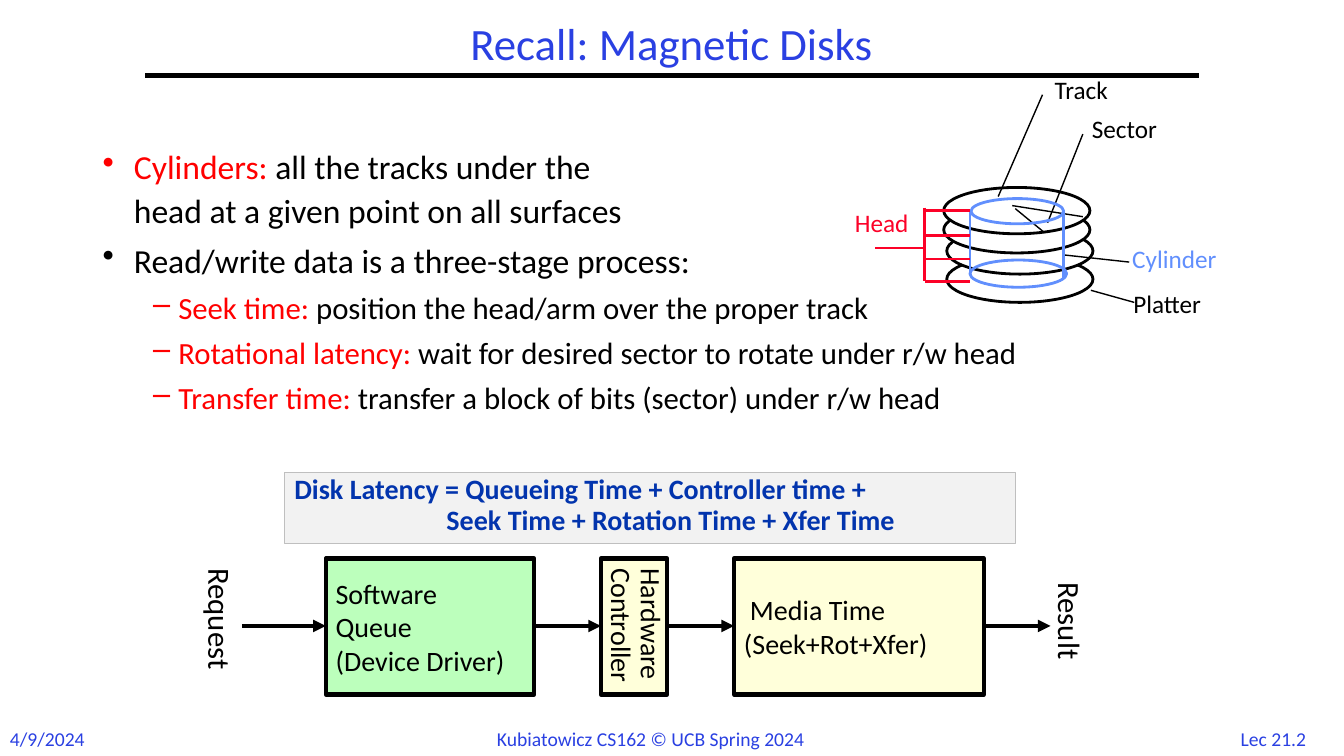
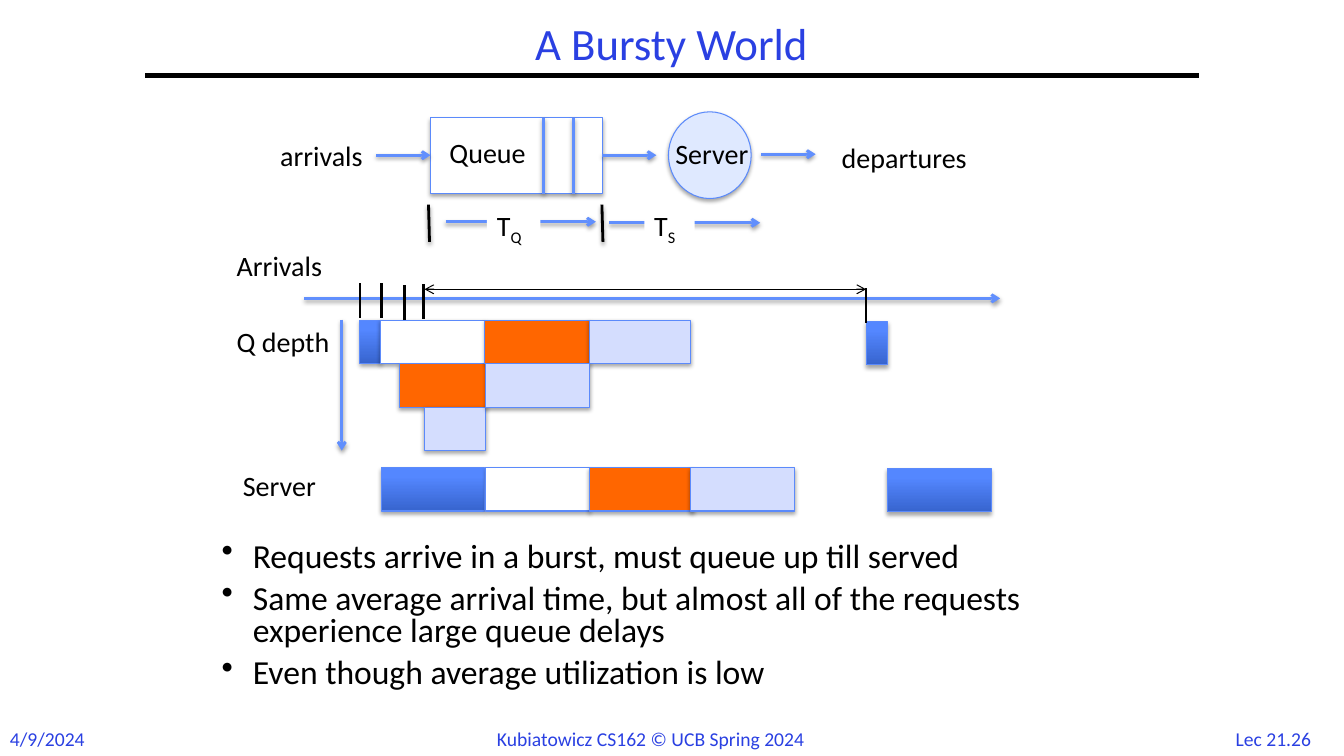
from dataclasses import dataclass

from lxml.etree import SubElement
from pptx import Presentation
from pptx.dml.color import RGBColor
from pptx.enum.shapes import MSO_CONNECTOR, MSO_SHAPE
from pptx.enum.text import MSO_ANCHOR, PP_ALIGN
from pptx.oxml.ns import qn
from pptx.util import Cm, Pt

BLACK, WHITE, RED = "000000", "FFFFFF", "FF0000"
TITLE_BLUE, LATENCY_BLUE = "2A40E2", "0234AD"
LINE_BLUE, EDGE_BLUE = "618FFD", "5B8AFB"
HEAD_RED, GREEN, CREAM = "FC0128", "BCFFBC", "FFFFDA"
ORANGE, PALE, SERVER_FILL = "FF6600", "D4DDFE", "DFE9FF"
BLUE_GRADIENT = ("3764CE", "5487FF")
BULLETS = [("•", 0.31, -0.31, 24), ("–", 0.75, -0.25, 22)]
NORMAL, TIGHT = (0.1, 0.05), (0.07, 0.03)


def inch(value):
    return Cm(2.54 * value)


def rgb(value):
    return RGBColor.from_string(value)


@dataclass
class Deck:
    prs: object
    slide: object = None
    font: str = "Calibri"

    def new_slide(self, title, number):
        self.slide = self.prs.slides.add_slide(self.prs.slide_layouts[6])
        self.label(12.09, 7.16, 1.08, 0.34, number, 14, TITLE_BLUE,
                   align=PP_ALIGN.CENTER)
        self.label(0, 7.16, 1.5, 0.34, "4/9/2024", 14, TITLE_BLUE)
        self.label(4.83, 7.16, 3.68, 0.34,
                   "Kubiatowicz CS162 © UCB Spring 2024", 14, TITLE_BLUE)
        self.line(1.44, 0.75, 11.89, 0.75, width=3)
        tf = self.label(1.44, 0.17, 10.44, 0.58, title, 32, TITLE_BLUE,
                        align=PP_ALIGN.CENTER, spacing=0.9).text_frame
        tf.vertical_anchor = MSO_ANCHOR.MIDDLE

    def frame(self, sp, inset=NORMAL):
        tf = sp.text_frame
        tf.word_wrap = True
        tf.margin_left = tf.margin_right = inch(inset[0])
        tf.margin_top = tf.margin_bottom = inch(inset[1])
        return tf

    def run(self, p, text, size, color=BLACK, bold=False):
        r = p.add_run()
        r.text = text
        r.font.name = self.font
        r.font.size = Pt(size)
        r.font.bold = bold
        r.font.color.rgb = rgb(color)
        return r

    def para(self, tf, runs, size, spacing=1.0, before=0, align=PP_ALIGN.LEFT,
             indent=0, bold=False):
        p = tf.paragraphs[0]
        if p.runs:
            p = tf.add_paragraph()
        p.alignment = align
        p.line_spacing = spacing
        p.space_before = Pt(before * size)
        if indent:
            p._p.get_or_add_pPr().set("marL", str(inch(indent)))
        for text, color in runs:
            if text == "\n":
                p.add_line_break()
            else:
                self.run(p, text, size, color, bold)
        return p

    def label(self, x, y, w, h, text, size=20, color=BLACK, inset=NORMAL,
              align=PP_ALIGN.LEFT, spacing=1.0):
        sp = self.slide.shapes.add_textbox(inch(x), inch(y), inch(w), inch(h))
        self.para(self.frame(sp, inset), [(text, color)], size, spacing,
                  align=align)
        return sp

    def bullets(self, x, y, w, h, items, spacing, before):
        sp = self.slide.shapes.add_textbox(inch(x), inch(y), inch(w), inch(h))
        tf = self.frame(sp)
        for level, runs in items:
            char, left, hang, size = BULLETS[level]
            p = self.para(tf, runs, size, spacing, before, indent=left)
            pPr = p._p.get_or_add_pPr()
            pPr.set("indent", str(inch(hang)))
            SubElement(pPr, qn("a:buChar")).set("char", char)

    def effects(self, sp, shadow, alpha):
        spPr = sp.element.spPr
        lst = spPr.find(qn("a:effectLst"))
        if lst is None:
            lst = SubElement(spPr, qn("a:effectLst"))
        if shadow:
            outer = SubElement(lst, qn("a:outerShdw"), blurRad=str(Pt(3.1)),
                               dist=str(Pt(1.7)), dir="5400000",
                               rotWithShape="0")
            clr = SubElement(outer, qn("a:srgbClr"), val=BLACK)
            SubElement(clr, qn("a:alpha"), val=str(alpha * 1000))

    def shape(self, x, y, w, h, fill=None, line=BLACK, width=2.0,
              kind=MSO_SHAPE.RECTANGLE, shadow=False):
        sp = self.slide.shapes.add_shape(kind, inch(x), inch(y), inch(w),
                                         inch(h))
        if fill is None:
            sp.fill.background()
        elif isinstance(fill, tuple):
            sp.fill.gradient()
            sp.fill.gradient_angle = 90
            for stop, color, at in zip(sp.fill.gradient_stops, fill, (0, 0.8)):
                stop.color.rgb = rgb(color)
                stop.position = at
        else:
            sp.fill.solid()
            sp.fill.fore_color.rgb = rgb(fill)
        if line:
            sp.line.color.rgb = rgb(line)
            sp.line.width = Pt(width)
        else:
            sp.line.fill.background()
        sp.shadow.inherit = False
        self.effects(sp, shadow, 35)
        return sp

    def ellipse(self, x, y, w, h, fill=None, line=BLACK, **style):
        return self.shape(x, y, w, h, fill, line, kind=MSO_SHAPE.OVAL, **style)

    def block(self, x, y, w, h, fill, lines, spacing=1.0, before=0):
        tf = self.frame(self.shape(x, y, w, h, fill, width=3))
        tf.vertical_anchor = MSO_ANCHOR.MIDDLE
        for text, indent in lines:
            self.para(tf, [(text, BLACK)], 20, spacing, before, indent=indent)
        return tf

    def line(self, x1, y1, x2, y2, color=BLACK, width=1.0, head=None,
             tail=None, shadow=False):
        cx = self.slide.shapes.add_connector(
            MSO_CONNECTOR.STRAIGHT, inch(x1), inch(y1), inch(x2), inch(y2))
        cx.line.color.rgb = rgb(color)
        cx.line.width = Pt(width)
        ln = cx.element.spPr.find(qn("a:ln"))
        for tag, end in (("a:headEnd", head), ("a:tailEnd", tail)):
            if end:
                SubElement(ln, qn(tag), type=end)
        self.effects(cx, shadow, 38)

    def blue_line(self, x1, y1, x2, y2, tail="arrow"):
        self.line(x1, y1, x2, y2, LINE_BLUE, 2, tail=tail, shadow=True)


def draw_disk(deck):
    for x, y in ((9.39, 2.54), (9.39, 2.26), (9.36, 2.05), (9.36, 1.86)):
        deck.ellipse(x, y, 1.45, 0.46, WHITE)
    for ends in ((10.07, 2.07, 10.35, 2.3), (10.04, 2.04, 10.74, 2.15),
                 (10.39, 2.21, 10.74, 1.33), (9.9, 1.95, 10.34, 0.94),
                 (10.56, 2.53, 11.2, 2.6), (10.82, 2.88, 11.25, 3)):
        deck.line(*ends)
    deck.ellipse(9.62, 2.58, 0.96, 0.27, line=LINE_BLUE)
    deck.ellipse(9.63, 1.97, 0.92, 0.25, line=LINE_BLUE)
    for x, bottom in ((9.62, 2.71), (10.55, 2.76)):
        deck.line(x, 2.09, x, bottom, LINE_BLUE, 2)
    deck.line(9.17, 2.06, 9.17, 2.79, HEAD_RED, 2)
    deck.line(9.18, 2.46, 8.68, 2.46, HEAD_RED, 2)
    for y in (2.09, 2.34, 2.57, 2.79):
        deck.line(9.17, y, 9.62, y, HEAD_RED, 2)
    for x, y, w, text, color in (
            (10.76, 1.14, 0.87, "Sector", BLACK),
            (10.39, 0.75, 0.76, "Track", BLACK),
            (11.16, 2.43, 1.07, "Cylinder", LINE_BLUE),
            (8.41, 2.07, 0.74, "Head", HEAD_RED),
            (11.17, 2.88, 0.87, "Platter", BLACK)):
        deck.label(x, y, w, 0.31, text, 18, color, TIGHT, spacing=0.85)


def draw_request_path(deck):
    top, height, middle = 5.54, 1.35, 6.21
    deck.block(3.23, top, 2.07, height, GREEN,
               [("Software", 0), ("Queue", 0), ("(Device Driver)", 0)])
    tf = deck.block(5.96, top, 0.66, height, CREAM,
                    [("Hardware", 0), ("Controller", 0)], 0.8, 0.1)
    tf._txBody.bodyPr.set("vert", "eaVert")
    deck.block(7.28, top, 2.48, height, CREAM,
               [("Media Time", 0.06), ("(Seek+Rot+Xfer)", 0)])
    for x1, x2 in ((2.4, 3.23), (5.29, 5.96), (6.62, 7.28), (9.76, 10.42)):
        deck.line(x1, middle, x2, middle, width=3, tail="triangle")
    for x, w, text in ((1.51, 1.35, "Request"), (10.08, 1.07, "Result")):
        deck.label(x, 5.98, w, 0.47, text, 22).rotation = 90


def magnetic_disks(deck):
    deck.new_slide("Recall: Magnetic Disks", "Lec 21.2")
    stages = (("Seek time: ", "position the head/arm over the proper track"),
              ("Rotational latency: ",
               "wait for desired sector to rotate under r/w head"),
              ("Transfer time: ",
               "transfer a block of bits (sector) under r/w head"))
    items = [
        (0, [("Cylinders: ", RED), ("all the tracks under the", BLACK),
             ("\n", BLACK), ("head at a given point on all surfaces", BLACK)]),
        (0, [("Read/write data is a three-stage process:", BLACK)])]
    items += [(1, [(term, RED), (text, BLACK)]) for term, text in stages]
    deck.bullets(0.92, 1.36, 11.5, 3.28, items, 1.1, 0.15)
    draw_disk(deck)
    draw_request_path(deck)
    sp = deck.shape(2.82, 4.69, 7.25, 0.7, "F2F2F2", "BFBFBF", 0.75)
    tf = deck.frame(sp)
    tf.vertical_anchor = MSO_ANCHOR.TOP
    for text, indent in (
            ("Disk Latency = Queueing Time + Controller time +", 0),
            ("Seek Time + Rotation Time + Xfer Time", 1.51)):
        deck.para(tf, [(text, LATENCY_BLUE)], 20, 0.8, 0.15, indent=indent,
                  bold=True)


def draw_queue(deck):
    edge = dict(line=EDGE_BLUE, width=0.75, shadow=True)
    deck.blue_line(6.04, 2.21, 7.54, 2.21)
    deck.blue_line(4.42, 2.2, 5.91, 2.2)
    deck.shape(4.27, 1.17, 1.71, 0.75, WHITE, **edge)
    for x in (5.69, 5.39):
        deck.blue_line(x, 1.17, x, 1.92, tail=None)
    deck.ellipse(6.63, 1.11, 0.82, 0.86, SERVER_FILL, **edge)
    for x, y in ((3.73, 1.54), (5.97, 1.54), (7.55, 1.53)):
        deck.blue_line(x, y, x + 0.54, y)
    for x, w, sub in ((4.83, 0.53, "Q"), (6.39, 0.5, "S")):
        tf = deck.frame(deck.shape(x, 2.02, w, 0.44, WHITE, None))
        tf.vertical_anchor = MSO_ANCHOR.TOP
        p = deck.para(tf, [("T", BLACK)], 20)
        r = deck.run(p, sub, 20)
        r.font._element.set("baseline", "-25000")
    for x in (4.25, 5.97):
        deck.line(x, 2.03, x + 0.01, 2.4, width=2, shadow=True)


def draw_timeline(deck):
    deck.blue_line(3.02, 2.96, 9.92, 2.96)
    rows = [3.18 + 0.43 * i for i in range(3)]
    served = 4.64
    for x, y, w, fill in (
            (3.57, rows[0], 0.21, BLUE_GRADIENT),
            (3.78, served, 1.03, BLUE_GRADIENT),
            (3.77, rows[0], 1.04, WHITE), (4.82, served, 1.03, WHITE),
            (3.96, rows[1], 0.87, ORANGE), (5.85, served, 1.03, ORANGE),
            (4.81, rows[0], 1.04, ORANGE), (6.85, served, 1.03, PALE),
            (4.21, rows[2], 0.61, PALE), (5.85, rows[0], 1, PALE),
            (4.82, rows[1], 1.03, PALE),
            (8.59, 3.19, 0.21, BLUE_GRADIENT),
            (8.8, 4.65, 1.03, BLUE_GRADIENT)):
        deck.shape(x, y, w, 0.43, fill, EDGE_BLUE, 0.75, shadow=True)
    for x, y in ((3.57, 2.81), (3.78, 2.81), (4.01, 2.83), (4.2, 2.82),
                 (8.59, 2.86)):
        deck.line(x, y, x, y + 0.34, width=2)
    deck.blue_line(3.39, 3.17, 3.39, 4.47)
    deck.line(4.21, 2.87, 8.59, 2.87, width=0.75, head="arrow", tail="arrow")


def bursty_world(deck):
    deck.new_slide("A Bursty World", "Lec 21.26")
    draw_queue(deck)
    draw_timeline(deck)
    for x, y, w, text in (
            (4.36, 1.3, 1.04, "Queue"), (6.6, 1.31, 1.03, "Server"),
            (2.68, 1.33, 1.11, "arrivals"), (8.25, 1.34, 1.54, "departures"),
            (2.25, 2.42, 1.14, "Arrivals"), (2.25, 3.17, 1.2, "Q depth"),
            (2.31, 4.6, 1.03, "Server")):
        deck.label(x, y, w, 0.44, text)
    points = ("Requests arrive in a burst, must queue up till served",
              "Same average arrival time, but almost all of the requests "
              "experience large queue delays",
              "Even though average utilization is low")
    deck.bullets(2.1, 5.33, 9, 1.75,
                 [(0, [(text, BLACK)]) for text in points], 0.8, 0.3)


def main():
    prs = Presentation()
    prs.slide_width, prs.slide_height = inch(13.33), inch(7.5)
    deck = Deck(prs)
    magnetic_disks(deck)
    bursty_world(deck)
    prs.save("out.pptx")


if __name__ == "__main__":
    main()
